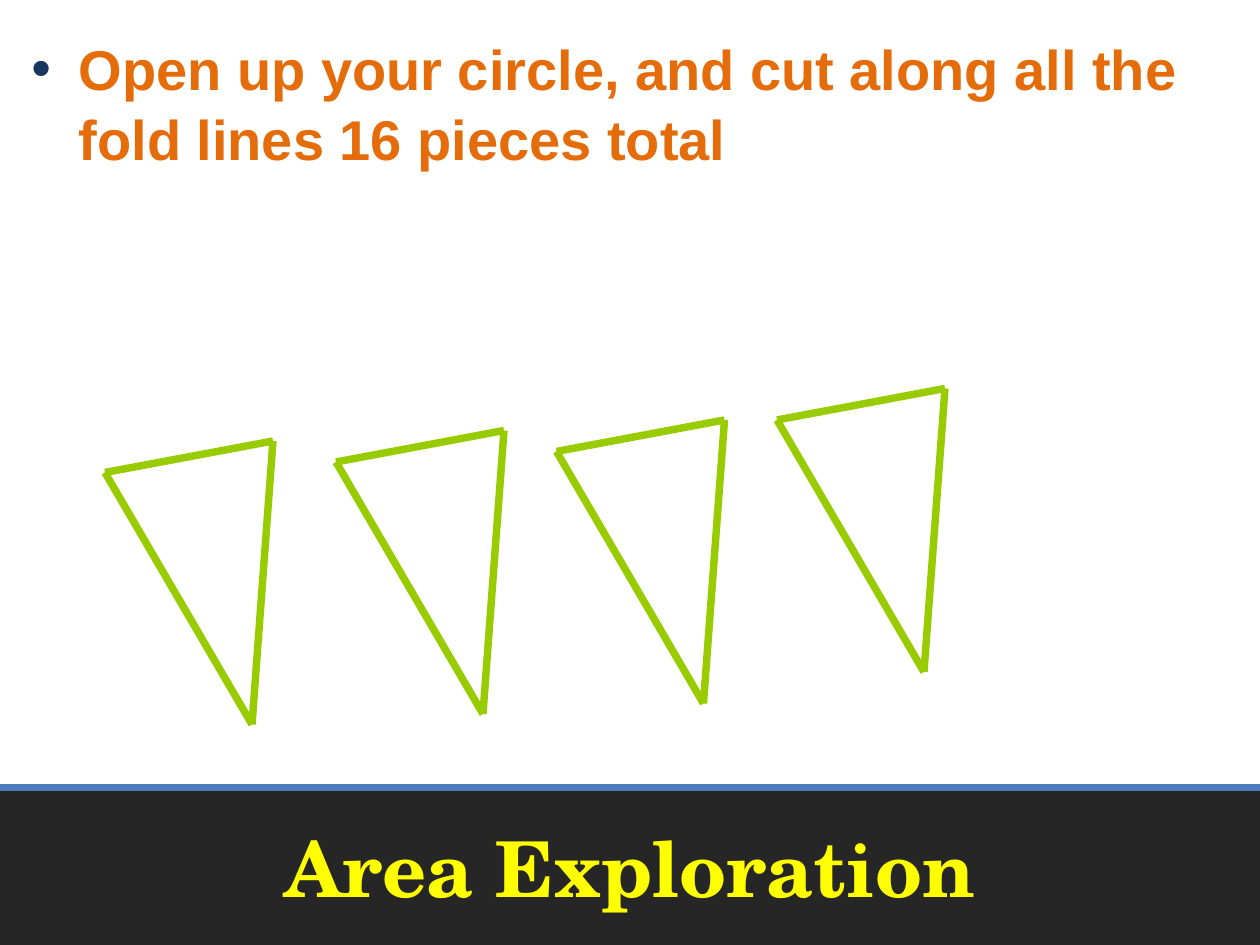
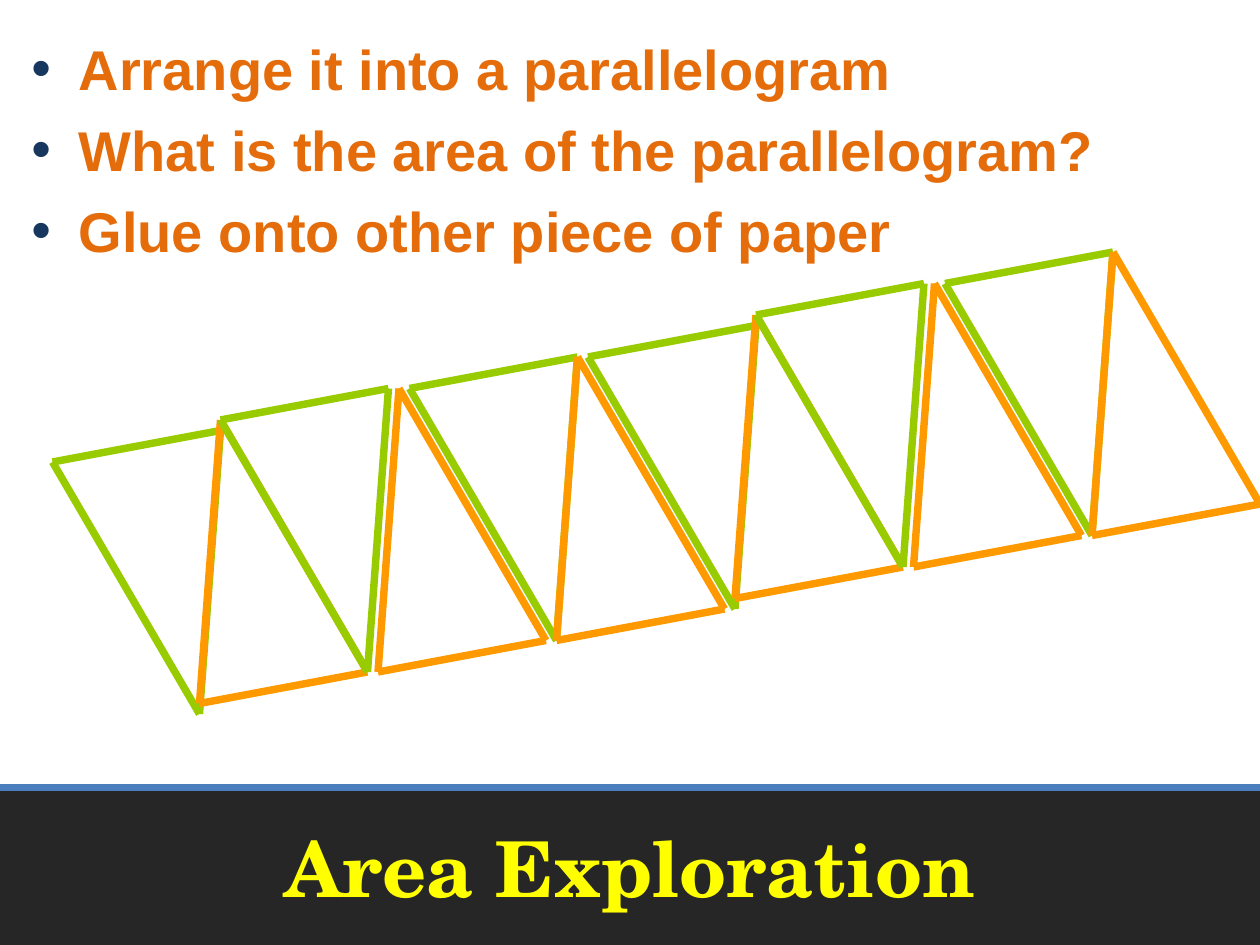
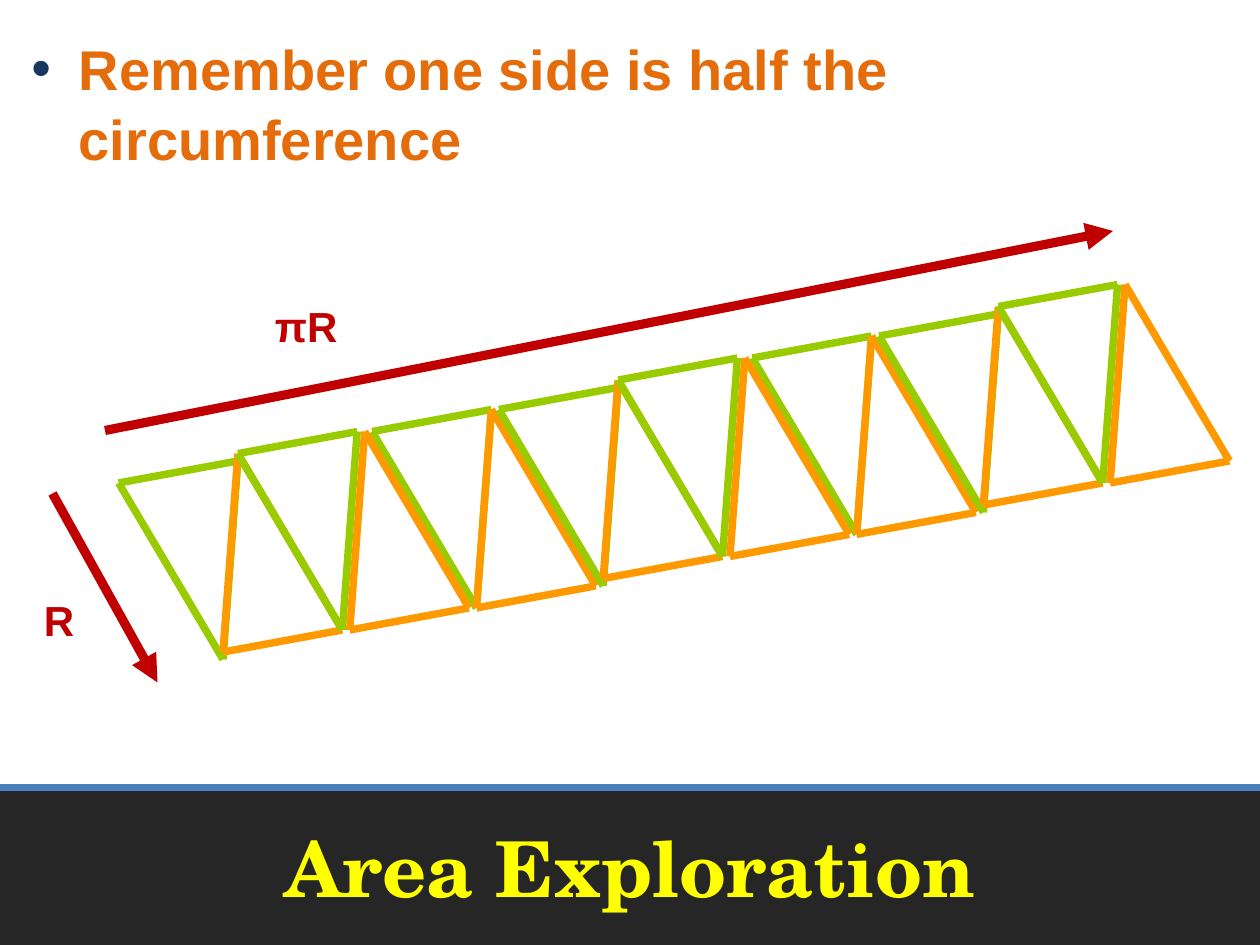
from lxml.etree import SubElement
from pptx import Presentation
from pptx.dml.color import RGBColor
from pptx.enum.shapes import MSO_CONNECTOR, MSO_SHAPE
from pptx.enum.text import MSO_ANCHOR, PP_ALIGN
from pptx.oxml.ns import qn
from pptx.util import Pt

PX = 7620  # EMU per px, 120 px to the inch
SLIDE_W, SLIDE_H = 1200, 900

COLORS = {
    "band": "262626", "rule": "4B7EBC", "title": "FFFF00",
    "body": "E46C0A", "bullet": "17375E",
    "up": "99CC00", "down": "FF9900", "measure": "C00000",
}
BODY_FONT, TITLE_FONT = "Arial", "TeX Gyre Schola"

# Sides of a circle piece, relative to its 160 x 270 box
PIECE_SIDES = {
    "up": [((0, 30), (140, 270)), ((160, 0), (140, 270)), ((160, 0), (0, 30))],
    "down": [((160, 240), (20, 0)), ((0, 270), (20, 0)), ((0, 270), (160, 240))],
}
# Six interlocking pieces, and the step from one such run to the next
RUN = [("up", 0, 0), ("down", 140, -10), ("up", 160, -40),
       ("up", 340, -70), ("down", 310, -40), ("down", 480, -70)]
LAST_RUN = RUN[:3] + RUN[4:5]
RUN_STEP = (510, -100)


def emu(length):
    return round(length * PX)


def rgb(name):
    return RGBColor.from_string(COLORS[name])


def add_line(shapes, start, end, color, width, arrow=False):
    line = shapes.add_connector(MSO_CONNECTOR.STRAIGHT,
                                *(emu(v) for v in (*start, *end)))
    line.line.color.rgb = rgb(color)
    line.line.width = Pt(width)
    if arrow:
        SubElement(line.line._get_or_add_ln(), qn("a:tailEnd"), type="triangle")
    SubElement(line._element.spPr, qn("a:effectLst"))


def add_bullet(paragraph):
    props = paragraph._p.get_or_add_pPr()
    props.set("marL", str(emu(45)))
    props.set("indent", str(emu(-45)))
    color = SubElement(props, qn("a:buClr"))
    SubElement(color, qn("a:srgbClr"), val=COLORS["bullet"])
    SubElement(props, qn("a:buFont"), typeface=BODY_FONT)
    SubElement(props, qn("a:buChar"), char="•")


def add_text(shapes, box, lines, color, size, font=BODY_FONT, align=PP_ALIGN.LEFT,
             anchor=MSO_ANCHOR.TOP, wrap=True, inset=(12, 6), bullets=False):
    frame = shapes.add_textbox(*(emu(v) for v in box)).text_frame
    frame.word_wrap = wrap
    frame.vertical_anchor = anchor
    frame.margin_left = frame.margin_right = emu(inset[0])
    frame.margin_top = frame.margin_bottom = emu(inset[1])
    for index, line in enumerate(lines):
        paragraph = frame.paragraphs[0] if index == 0 else frame.add_paragraph()
        paragraph.alignment = align
        if bullets:
            paragraph.line_spacing = 1.04
            paragraph.space_before = Pt(size * 0.2)
            add_bullet(paragraph)
        run = paragraph.add_run()
        run.text = line
        run.font.name, run.font.size, run.font.bold = font, Pt(size), True
        run.font.color.rgb = rgb(color)


def add_title_band(slide, box):
    left, top, width, height = box
    band = slide.shapes.add_shape(MSO_SHAPE.RECTANGLE, *(emu(v) for v in box))
    band.shadow.inherit = False
    band.fill.solid()
    band.fill.fore_color.rgb = rgb("band")
    band.line.fill.background()
    add_line(slide.shapes, (left, top), (left + width, top), "rule", 4)
    add_text(slide.shapes, (left + 30, top, width - 60, height), ["Area Exploration"],
             "title", 44, font=TITLE_FONT, align=PP_ALIGN.CENTER,
             anchor=MSO_ANCHOR.MIDDLE)


def add_exploration_slide(deck, steps):
    slide = deck.slides.add_slide(deck.slide_layouts[6])
    add_title_band(slide, (0, 750, SLIDE_W, 150))
    add_text(slide.shapes, (30, 30, 1140, 710), steps, "body", 32,
             inset=(0, 0), bullets=True)
    return slide


def add_piece(shapes, kind, left, top, scale=(1, 1)):
    def place(point):
        return left + point[0] * scale[0], top + point[1] * scale[1]

    for start, end in PIECE_SIDES[kind]:
        add_line(shapes, place(start), place(end), kind, 4.25)


def add_parallelogram(shapes, left, top, runs, scale=(1, 1)):
    for index, run in enumerate(runs):
        for kind, dx, dy in run:
            add_piece(shapes, kind,
                      left + (dx + index * RUN_STEP[0]) * scale[0],
                      top + (dy + index * RUN_STEP[1]) * scale[1], scale)


def add_measure(shapes, start, end, label, label_box):
    add_line(shapes, start, end, "measure", 5.25, arrow=True)
    add_text(shapes, label_box, [label], "measure", 24, wrap=False)


def main():
    deck = Presentation()
    deck.slide_width, deck.slide_height = emu(SLIDE_W), emu(SLIDE_H)

    # Loose pieces
    cutting = add_exploration_slide(
        deck, ["Open up your circle, and cut along all the fold lines 16 pieces total"])
    for left, top in [(100, 420), (320, 410), (530, 400), (740, 370)]:
        add_piece(cutting.shapes.add_group_shape().shapes, "up", left, top)

    # Pieces arranged side by side
    arranging = add_exploration_slide(deck, [
        "Arrange it into a parallelogram",
        "What is the area of the parallelogram?",
        "Glue onto other piece of paper",
    ])
    add_parallelogram(arranging.shapes, 50, 410, [RUN, RUN])

    # All 16 pieces with the lengths of both sides
    measuring = add_exploration_slide(
        deck, ["Remember one side is half the circumference"])
    diagram = measuring.shapes.add_group_shape().shapes
    add_parallelogram(diagram, 113, 439, [RUN, RUN, LAST_RUN], scale=(0.71, 0.7))
    add_measure(diagram, (50, 470), (150, 650), "R", (30, 560, 53, 60))
    add_measure(diagram, (100, 410), (1060, 220), "πR", (250, 280, 84, 60))

    deck.save("out.pptx")


if __name__ == "__main__":
    main()
